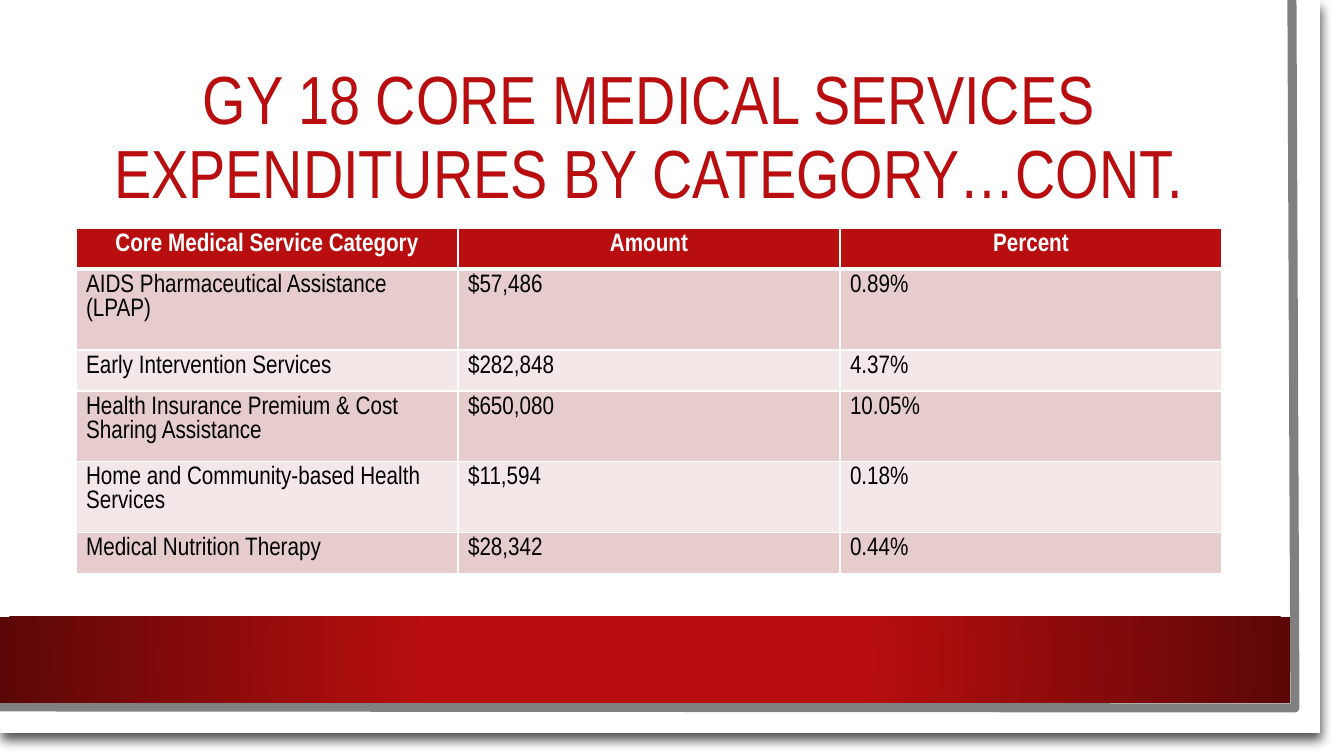
from lxml import etree
from pptx import Presentation
from pptx.dml.color import RGBColor
from pptx.enum.shapes import MSO_SHAPE
from pptx.enum.text import MSO_ANCHOR, PP_ALIGN
from pptx.oxml import parse_xml
from pptx.oxml.ns import nsdecls, qn
from pptx.util import Pt

EMU_PER_PX = 12192000 / 1344
RECTANGLE = MSO_SHAPE.RECTANGLE
MIDDLE = MSO_ANCHOR.MIDDLE
CENTER, LEFT = PP_ALIGN.CENTER, PP_ALIGN.LEFT

FONT = "Arial Narrow"
RED = RGBColor(0xB8, 0x0E, 0x0F)
DARK_RED = RGBColor(0x5C, 0x07, 0x07)
ROSE = RGBColor(0xE6, 0xCC, 0xCC)
PALE_ROSE = RGBColor(0xF3, 0xE7, 0xE7)
GRAY = RGBColor(0x80, 0x80, 0x80)
WHITE = RGBColor(0xFF, 0xFF, 0xFF)
BLACK = RGBColor(0, 0, 0)

TITLE = "GY 18 CORE MEDICAL SERVICES EXPENDITURES BY CATEGORY…CONT."
ROWS = [
    ("Core Medical Service Category", "Amount", "Percent"),
    ("AIDS Pharmaceutical Assistance (LPAP)", "$57,486", "0.89%"),
    ("Early Intervention Services", "$282,848", "4.37%"),
    ("Health Insurance Premium & Cost Sharing Assistance", "$650,080", "10.05%"),
    ("Home and Community-based Health Services", "$11,594", "0.18%"),
    ("Medical Nutrition Therapy", "$28,342", "0.44%"),
]
ROW_HEIGHTS = [41, 81, 41, 57, 57, 41]


def px(length):
    return round(length * EMU_PER_PX)


def add_panel(page, left, top, width, height):
    panel = page.shapes.add_shape(RECTANGLE, px(left), px(top), px(width), px(height))
    panel.shadow.inherit = False
    panel.fill.solid()
    panel.fill.fore_color.rgb = WHITE
    panel.line.fill.background()
    return panel


def add_soft_shadow(shape):
    effects = shape._element.spPr.find(qn("a:effectLst"))
    effects.append(parse_xml(
        f'<a:outerShdw {nsdecls("a")} blurRad="{Pt(7.8)}" dist="{Pt(6)}" '
        f'dir="{73 * 60000}" algn="tl" rotWithShape="0">'
        f'<a:srgbClr val="{BLACK}"><a:alpha val="68000"/></a:srgbClr></a:outerShdw>'))


def fill_from_center(shape, inner, outer):
    """Fill with a gradient that spreads from the middle of the shape."""
    properties = shape._element.spPr
    properties.replace(properties.find(qn("a:solidFill")), parse_xml(
        f'<a:gradFill {nsdecls("a")} rotWithShape="1"><a:gsLst>'
        f'<a:gs pos="34000"><a:srgbClr val="{inner}"/></a:gs>'
        f'<a:gs pos="100000"><a:srgbClr val="{outer}"/></a:gs></a:gsLst>'
        '<a:path path="circle"><a:fillToRect l="50000" t="50000" r="50000" b="50000"/>'
        '</a:path></a:gradFill>'))


def add_backdrop(page, width, height):
    """White sheet with a gray lower right edge and a red band at its foot."""
    add_soft_shadow(add_panel(page, 0, 0, width, height))
    builder = page.shapes.build_freeform(px(width - 28), 0)
    builder.add_line_segments(
        [(px(width - 25), px(height - 25)), (px(-3), px(height - 26))], close=False)
    edge = builder.convert_to_shape()
    edge.shadow.inherit = False
    edge.fill.background()
    edge.line.color.rgb = GRAY
    edge.line.width = Pt(6.5)
    band = add_panel(page, 0, height - 116, width - 30, 86)
    fill_from_center(band, RED, DARK_RED)


def add_title(page, left, top, width, height):
    box = page.shapes.add_textbox(px(left), px(top), px(width), px(height))
    frame = box.text_frame
    frame.word_wrap = True
    frame.vertical_anchor = MIDDLE
    para = frame.paragraphs[0]
    para.text = TITLE
    para.alignment = CENTER
    para.line_spacing = 0.9
    para.font.name = FONT
    para.font.size = Pt(48.6)
    para.font.color.rgb = RED


def set_borders(cell, bottom_width):
    properties = cell._tc.get_or_add_tcPr()
    widths = {"lnL": 1, "lnR": 1, "lnT": 1, "lnB": bottom_width}
    for index, (side, width) in enumerate(widths.items()):
        line = etree.Element(qn(f"a:{side}"), w=str(Pt(width)))
        fill = etree.SubElement(line, qn("a:solidFill"))
        etree.SubElement(fill, qn("a:srgbClr"), val=str(WHITE))
        properties.insert(index, line)


def fill_cell(cell, text, row):
    is_header = row == 0
    cell.fill.solid()
    cell.fill.fore_color.rgb = RED if is_header else ROSE if row % 2 else PALE_ROSE
    set_borders(cell, 3 if is_header else 1)
    para = cell.text_frame.paragraphs[0]
    para.text = text
    para.alignment = CENTER if is_header else LEFT
    para.font.name = FONT
    para.font.size = Pt(18)
    para.font.bold = is_header
    para.font.color.rgb = WHITE if is_header else BLACK


def add_spending_table(page, left, top, width):
    columns = len(ROWS[0])
    table = page.shapes.add_table(
        len(ROWS), columns, px(left), px(top), px(width), px(sum(ROW_HEIGHTS))).table
    for column in table.columns:
        column.width = px(width / columns)
    for row, (texts, height) in enumerate(zip(ROWS, ROW_HEIGHTS)):
        table.rows[row].height = px(height)
        for column, text in enumerate(texts):
            fill_cell(table.cell(row, column), text, row)


def main():
    deck = Presentation()
    deck.slide_width, deck.slide_height = px(1344), px(756)
    page = deck.slides.add_slide(deck.slide_layouts[6])
    add_backdrop(page, 1320, 733)
    add_title(page, 76, 76, 1146, 127)
    add_spending_table(page, 76, 228, 1146)
    deck.save("out.pptx")


if __name__ == "__main__":
    main()
